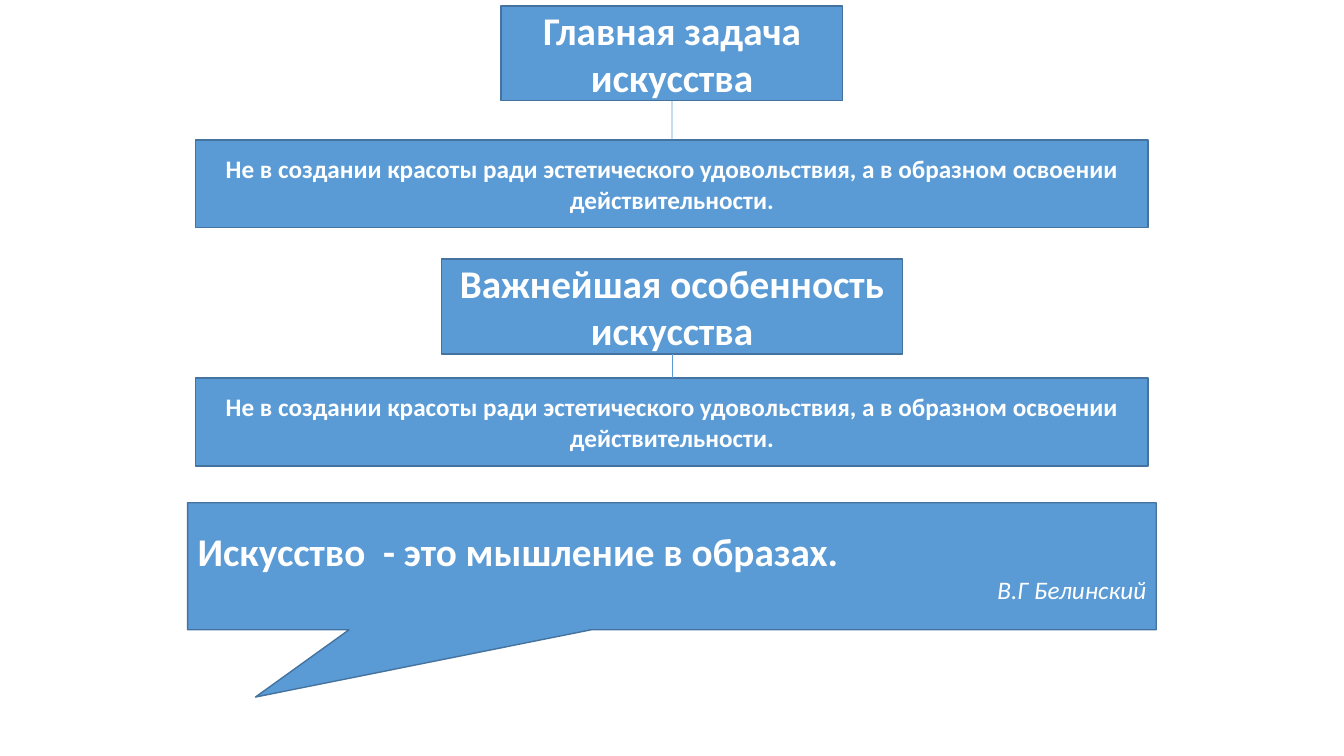
"""Build a slide on the task and the key feature of art."""
from dataclasses import dataclass

from lxml.etree import SubElement
from pptx import Presentation
from pptx.dml.color import RGBColor
from pptx.enum.shapes import MSO_CONNECTOR as Link, MSO_SHAPE as Kind
from pptx.enum.text import MSO_ANCHOR as Anchor, MSO_AUTO_SIZE as Fit, PP_ALIGN as Align
from pptx.oxml.ns import qn
from pptx.shapes.autoshape import Shape
from pptx.slide import Slide
from pptx.util import Cm, Pt

BLUE = RGBColor(0x5B, 0x9B, 0xD5)
EDGE = RGBColor(0x43, 0x73, 0x9E)
WHITE = RGBColor(0xFF, 0xFF, 0xFF)
WIDTH, HEIGHT = 33.87, 19.05
ANSWER = (
    "Не в создании красоты ради эстетического удовольствия, "
    "а в образном освоении действительности."
)


@dataclass
class Line:
    text: str
    size: int
    align: Align = Align.CENTER
    bold: bool = True
    slant: bool = False


@dataclass
class Box:
    top: float
    width: float
    height: float
    lines: list[Line]
    kind: Kind = Kind.RECTANGLE


@dataclass
class Pair:
    head: Box
    body: Box


PAIRS = [
    Pair(Box(0.15, 8.61, 2.39, [Line("Главная задача искусства", 28)]),
         Box(3.53, 24, 2.21, [Line(ANSWER, 18)])),
    Pair(Box(6.53, 11.61, 2.39, [Line("Важнейшая особенность искусства", 28)]),
         Box(9.53, 24, 2.21, [Line(ANSWER, 18)])),
]
QUOTE = Box(12.67, 24.41, 3.2, [
    Line("Искусство  - это мышление в образах.", 28, Align.LEFT),
    Line("В.Г Белинский", 18, Align.RIGHT, False, True),
], Kind.RECTANGULAR_CALLOUT)


def write(shape: Shape, lines: list[Line]) -> None:
    frame = shape.text_frame
    frame.word_wrap = True
    frame.auto_size = Fit.NONE
    frame.vertical_anchor = Anchor.MIDDLE
    for i, line in enumerate(lines):
        para = frame.add_paragraph() if i else frame.paragraphs[0]
        para.alignment = line.align
        run = para.add_run()
        run.text = line.text
        font = run.font
        font.name, font.size = "Calibri", Pt(line.size)
        font.bold, font.italic = line.bold, line.slant
        font.color.rgb = WHITE


def draw(slide: Slide, box: Box, shape: Shape | None = None) -> Shape:
    place = [Cm(v) for v in ((WIDTH - box.width) / 2, box.top, box.width, box.height)]
    if shape is None:
        shape = slide.shapes.add_shape(box.kind, *place)
    shape.left, shape.top, shape.width, shape.height = place
    shape.shadow.inherit = False
    shape.fill.solid()
    shape.fill.fore_color.rgb = BLUE
    shape.line.color.rgb = EDGE
    shape.line.width = Pt(1)
    write(shape, box.lines)
    return shape


def join(slide: Slide, head: Shape, body: Shape) -> None:
    line = slide.shapes.add_connector(Link.STRAIGHT, 0, 0, 0, 0)
    line.begin_connect(head, 2)
    line.end_connect(body, 0)
    line.line.color.rgb = BLUE
    line.line.width = Pt(0.5)
    SubElement(line.element.spPr, qn("a:effectLst"))


def main() -> None:
    deck = Presentation()
    deck.slide_width, deck.slide_height = Cm(WIDTH), Cm(HEIGHT)
    slide = deck.slides.add_slide(deck.slide_layouts[5])
    title = slide.shapes.title
    quote = draw(slide, QUOTE)
    quote.adjustments[0], quote.adjustments[1] = -0.43, 1.03
    for i, pair in enumerate(PAIRS):
        head = draw(slide, pair.head, None if i else title)
        join(slide, head, draw(slide, pair.body))
    deck.save("out.pptx")


if __name__ == "__main__":
    main()
